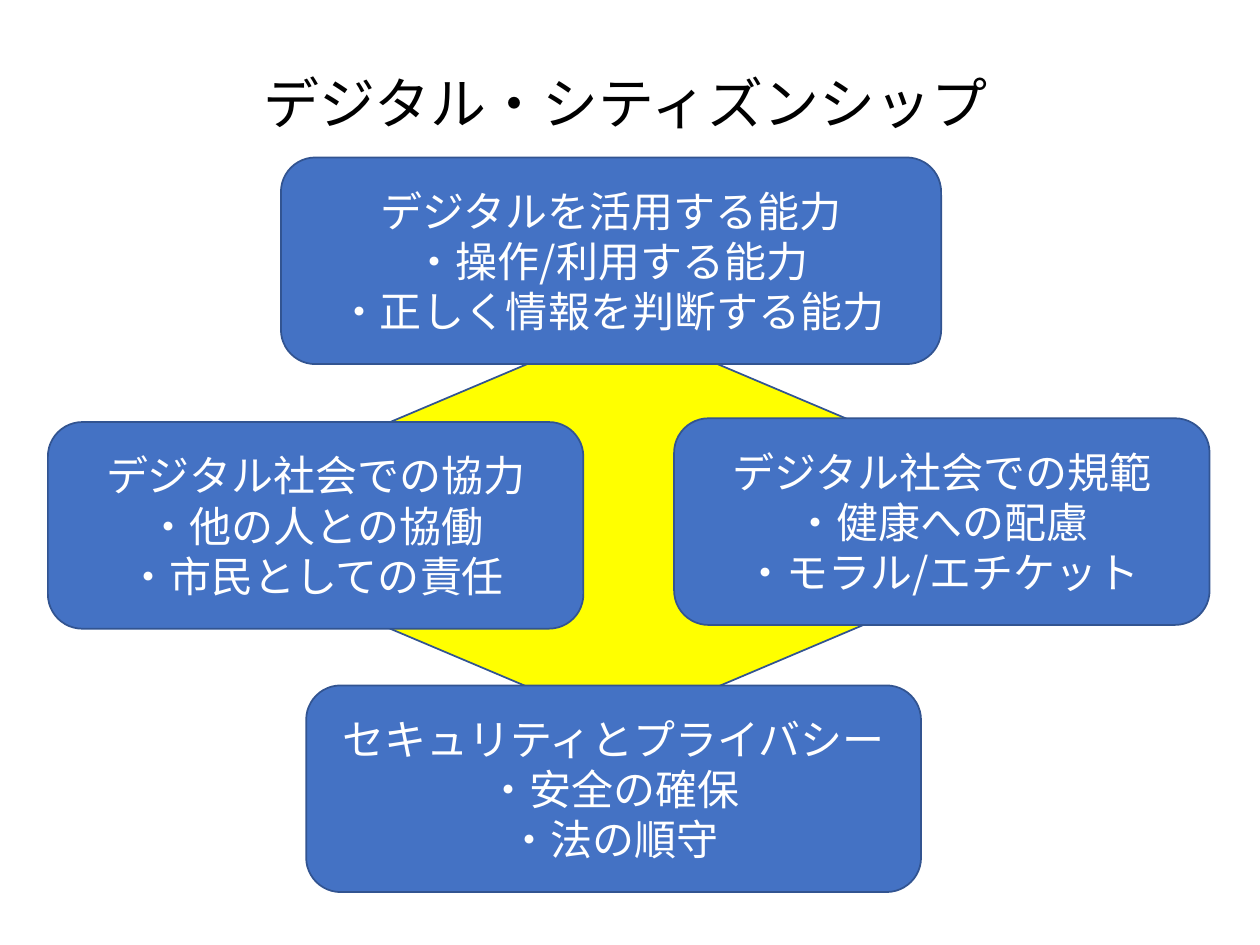
from lxml import etree
from pptx import Presentation
from pptx import util as u
from pptx.dml.color import RGBColor
from pptx.enum import shapes, text
from pptx.oxml.ns import qn

WIDE, HIGH = 10, 7.5
FONT = "Noto Sans CJK JP"
HUES = {"card": "4472C4", "edge": "325491", "core": "FFFF00",
        "ink": "000000", "pale": "FFFFFF"}
CARD_H = 1.64
# left, top, width, lines
CARDS = [
    (2.23, 1.25, 5.24,
     ["デジタルを活用する能力", "・操作/利用する能力", "・正しく情報を判断する能力"]),
    (0.38, 3.35, 4.25,
     ["デジタル社会での協力", "・他の人との協働", "・市民としての責任"]),
    (5.35, 3.32, 4.25,
     ["デジタル社会での規範", "・健康への配慮", "・モラル/エチケット"]),
    (2.43, 5.44, 4.88,
     ["セキュリティとプライバシー", "・安全の確保", "・法の順守"]),
]


def hue(name):
    return RGBColor.from_string(HUES[name])


def write(shape, lines, size, color, align, anchor):
    """Put the lines in one paragraph, parted by line breaks."""
    frame = shape.text_frame
    frame.word_wrap = True
    frame.auto_size = text.MSO_AUTO_SIZE.NONE
    frame.vertical_anchor = anchor
    para = frame.paragraphs[0]
    para.text = "\v".join(lines)
    para.alignment = align
    for run in para.runs:
        run.font.size = u.Pt(size)
        run.font.color.rgb = hue(color)
        run.font.name = FONT
        east = etree.SubElement(run.font._element, qn("a:ea"))
        east.set("typeface", FONT)


def draw(slide, kind, box, fill):
    shape = slide.shapes.add_shape(kind, *map(u.Inches, box))
    shape.shadow.inherit = False
    shape.fill.solid()
    shape.fill.fore_color.rgb = hue(fill)
    shape.line.color.rgb = hue("edge")
    shape.line.width = u.Pt(1)
    return shape


def add_title(slide, box):
    title = slide.shapes.title
    title.left, title.top, title.width, title.height = map(u.Inches, box)
    write(title, ["デジタル・シティズンシップ"], size=32, color="ink",
          align=text.PP_ALIGN.LEFT, anchor=text.MSO_ANCHOR.TOP)


def add_card(slide, box, lines):
    card = draw(slide, shapes.MSO_SHAPE.ROUNDED_RECTANGLE, box, "card")
    write(card, lines, size=24, color="pale",
          align=text.PP_ALIGN.CENTER, anchor=text.MSO_ANCHOR.MIDDLE)


def main():
    deck = Presentation()
    deck.slide_width, deck.slide_height = u.Inches(WIDE), u.Inches(HIGH)
    slide = deck.slides.add_slide(deck.slide_layouts[5])
    draw(slide, shapes.MSO_SHAPE.DIAMOND, (1.16, 2.57, 7.56, 3.2), "core")
    add_title(slide, (1.99, 0.49, 8, 0.64))
    for left, top, width, lines in CARDS:
        add_card(slide, (left, top, width, CARD_H), lines)
    deck.save("out.pptx")


if __name__ == "__main__":
    main()
